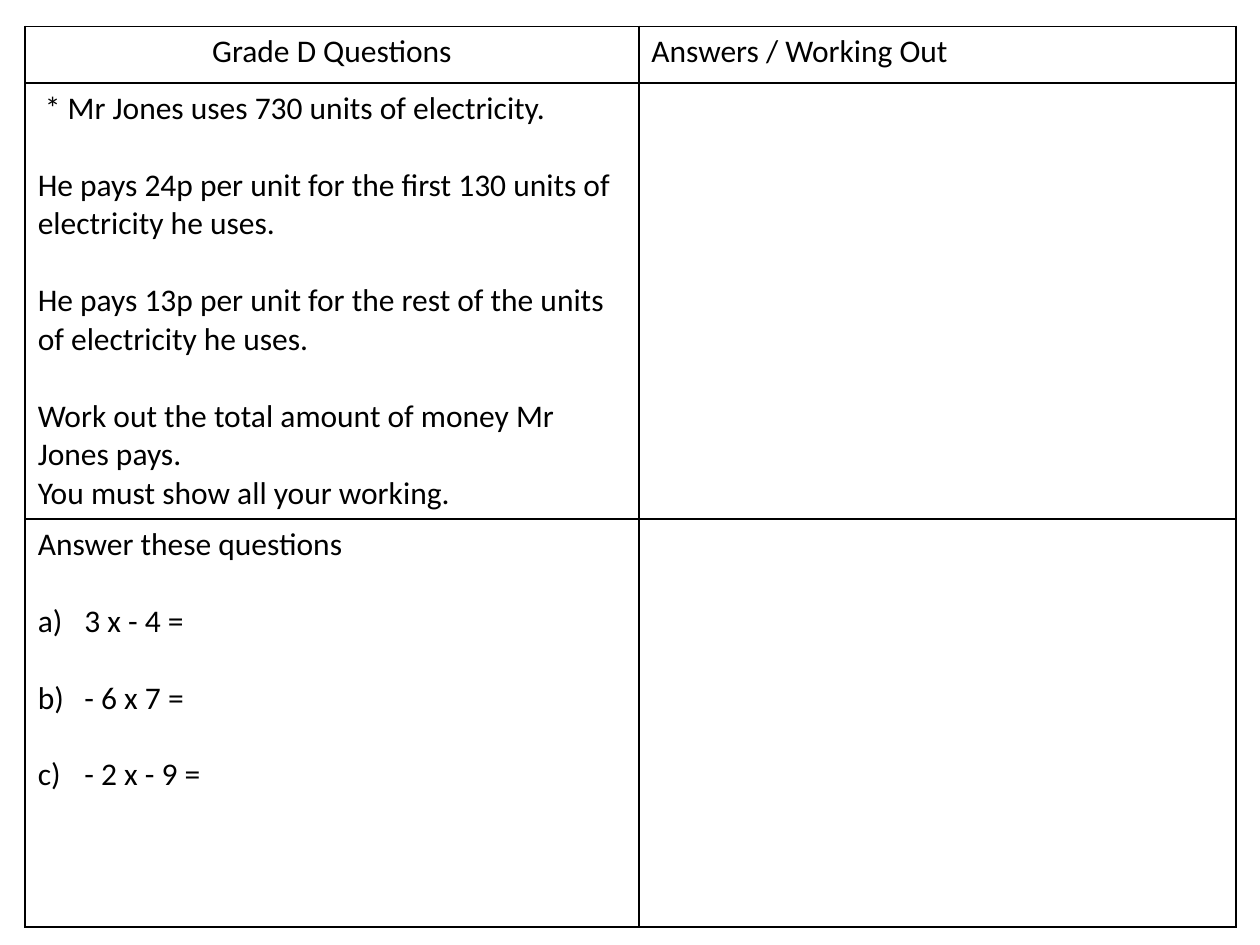
from lxml import etree
from pptx import Presentation
from pptx.dml.color import RGBColor
from pptx.enum.text import PP_ALIGN
from pptx.oxml.ns import qn
from pptx.util import Inches, Pt

BLACK = RGBColor(0x00, 0x00, 0x00)
FONT = "Calibri"
BLANK_LAYOUT = 6
LINE_GAP = 22  # height of one 18 pt line, in points
COLUMN_WIDTHS = (4.87, 4.74)
ROW_HEIGHTS = (0.45, 3.24, 3.24)

ELECTRICITY_QUESTION = (
    " * Mr Jones uses 730 units of electricity.",
    "He pays 24p per unit for the first 130 units of electricity he uses.",
    "He pays 13p per unit for the rest of the units of electricity he uses.",
    "Work out the total amount of money Mr Jones pays.",
)
WORKING_NOTE = "You must show all your working."
MULTIPLICATIONS = ("a)\t3 x - 4 =", "b)\t- 6 x 7 =", "c)\t- 2 x - 9 =")


def write(cell, text, size=18, color=BLACK, align=PP_ALIGN.LEFT, gap=0, hanging=0):
    """Add a paragraph to the cell, using its empty first paragraph if there is one."""
    frame = cell.text_frame
    paragraph = frame.add_paragraph() if frame.text else frame.paragraphs[0]
    paragraph.alignment = align
    paragraph.space_before = Pt(gap)
    if hanging:
        properties = paragraph._p.get_or_add_pPr()
        properties.set("marL", str(Inches(hanging)))
        properties.set("indent", str(-Inches(hanging)))
    run = paragraph.add_run()
    run.text = text
    run.font.name = FONT
    run.font.size = Pt(size)
    run.font.color.rgb = color


def outline(cell, color=BLACK, width=1):
    properties = cell._tc.get_or_add_tcPr()
    for side in ("a:lnL", "a:lnR", "a:lnT", "a:lnB"):
        line = etree.SubElement(properties, qn(side), w=str(Pt(width)))
        fill = etree.SubElement(line, qn("a:solidFill"))
        etree.SubElement(fill, qn("a:srgbClr"), val=str(color))


def add_question_table(slide, left, top):
    table = slide.shapes.add_table(
        len(ROW_HEIGHTS), len(COLUMN_WIDTHS), Inches(left), Inches(top),
        Inches(sum(COLUMN_WIDTHS)), Inches(sum(ROW_HEIGHTS)),
    ).table
    table.first_row = False
    table.horz_banding = False
    for column, width in zip(table.columns, COLUMN_WIDTHS):
        column.width = Inches(width)
    for row, height in zip(table.rows, ROW_HEIGHTS):
        row.height = Inches(height)
    for cell in table.iter_cells():
        outline(cell)
        cell.fill.background()

    write(table.cell(0, 0), "Grade D Questions", align=PP_ALIGN.CENTER)
    write(table.cell(0, 1), "Answers / Working Out")

    electricity = table.cell(1, 0)
    for index, text in enumerate(ELECTRICITY_QUESTION):
        write(electricity, text, gap=LINE_GAP if index else 0)
    write(electricity, WORKING_NOTE)

    multiplication = table.cell(2, 0)
    write(multiplication, "Answer these questions")
    for text in MULTIPLICATIONS:
        write(multiplication, text, gap=LINE_GAP, hanging=0.37)


def main():
    presentation = Presentation()
    presentation.slide_width = Inches(10)
    presentation.slide_height = Inches(7.5)
    slide = presentation.slides.add_slide(presentation.slide_layouts[BLANK_LAYOUT])
    add_question_table(slide, left=0.2, top=0.21)
    presentation.save("out.pptx")


if __name__ == "__main__":
    main()
